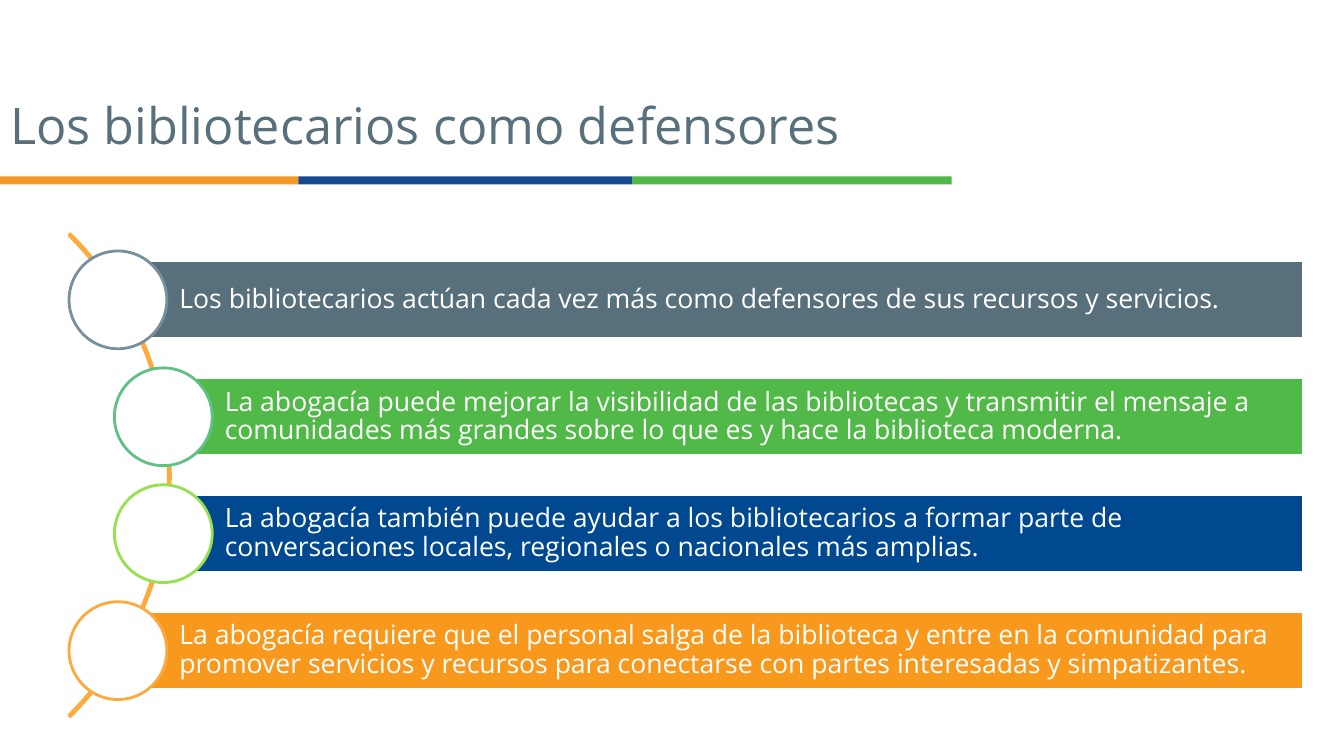
"""Build a slide on librarians as advocates, with four bars along an arc."""
from dataclasses import dataclass
from typing import Any

import pptx
import pptx.dml.color
import pptx.enum.shapes
import pptx.enum.text
import pptx.util

Inches = pptx.util.Inches
RGBColor = pptx.dml.color.RGBColor
Shape = pptx.enum.shapes.MSO_SHAPE
Anchor = pptx.enum.text.MSO_ANCHOR
Align = pptx.enum.text.PP_ALIGN

WHITE = RGBColor(0xFF, 0xFF, 0xFF)
SLATE = RGBColor(0x58, 0x6F, 0x7C)
GREEN = RGBColor(0x51, 0xB9, 0x48)
BLUE = RGBColor(0x00, 0x48, 0x90)
ORANGE = RGBColor(0xF8, 0x98, 0x1D)
STEEL = RGBColor(0x78, 0x90, 0x9C)
MINT = RGBColor(0x61, 0xC0, 0x85)
LIME = RGBColor(0x98, 0xE1, 0x4E)
AMBER = RGBColor(0xFE, 0xA9, 0x3F)
ARC = RGBColor(0xFF, 0xAA, 0x3F)
RULE_A = RGBColor(0xF4, 0x99, 0x25)
RULE_B = RGBColor(0x15, 0x4A, 0x90)
RULE_C = RGBColor(0x4E, 0xB7, 0x48)

FONT = "Open Sans"
RIGHT = 12.93
TOP = 2.59
STEP = 1.16
HIGH = 0.77
RING = 0.97


@dataclass(frozen=True)
class Rule:
    """A coloured piece of the line under the title."""

    left: float
    width: float
    fill: RGBColor


@dataclass(frozen=True)
class Point:
    """A bar of text with the ring at its left end."""

    left: float
    fill: RGBColor
    ring: RGBColor
    text: str


RULES = [
    Rule(0, 2.96, RULE_A),
    Rule(2.96, 3.31, RULE_B),
    Rule(6.27, 3.17, RULE_C),
]

POINTS = [
    Point(1.17, SLATE, STEEL,
          "Los bibliotecarios actúan cada vez más como defensores de sus "
          "recursos y servicios."),
    Point(1.62, GREEN, MINT,
          "La abogacía puede mejorar la visibilidad de las bibliotecas y "
          "transmitir el mensaje a comunidades más grandes sobre lo que es y "
          "hace la biblioteca moderna."),
    Point(1.62, BLUE, LIME,
          "La abogacía también puede ayudar a los bibliotecarios a formar "
          "parte de conversaciones locales, regionales o nacionales más "
          "amplias."),
    Point(1.17, ORANGE, AMBER,
          "La abogacía requiere que el personal salga de la biblioteca y "
          "entre en la comunidad para promover servicios y recursos para "
          "conectarse con partes interesadas y simpatizantes."),
]


def assign(item: Any, values: dict[str, Any]) -> None:
    """Set each named attribute of the item."""
    for name, value in values.items():
        setattr(item, name, value)


def draw(slide: Any, kind: Any, box: tuple[float, float, float, float],
         fill: RGBColor | None, line: RGBColor | None = None) -> Any:
    """Add a flat shape with the given fill and line."""
    shape = slide.shapes.add_shape(kind, *map(Inches, box))
    shape.shadow.inherit = False
    if fill is None:
        shape.fill.background()
    else:
        shape.fill.solid()
        shape.fill.fore_color.rgb = fill
    if line is None:
        shape.line.fill.background()
    else:
        shape.line.color.rgb = line
        shape.line.width = pptx.util.Pt(2)
    return shape


def write(shape: Any, text: str, size: int, color: RGBColor, anchor: Any,
          left: float, right: float) -> None:
    """Put one formatted paragraph in the shape."""
    frame = shape.text_frame
    frame.text = text
    assign(frame, {
        "word_wrap": True,
        "auto_size": pptx.enum.text.MSO_AUTO_SIZE.NONE,
        "vertical_anchor": anchor,
        "margin_left": Inches(left),
        "margin_right": Inches(right),
        "margin_top": Inches(0.05),
        "margin_bottom": Inches(0.05),
    })
    line = frame.paragraphs[0]
    assign(line, {"alignment": Align.LEFT, "line_spacing": 0.9})
    assign(line.font, {"name": FONT, "size": pptx.util.Pt(size)})
    line.font.color.rgb = color


def head(slide: Any) -> None:
    """Place the title and the line below it."""
    for rule in RULES:
        draw(slide, Shape.RECTANGLE, (rule.left, 1.75, rule.width, 0.08),
             rule.fill)
    title = slide.shapes.title
    assign(title, {"left": Inches(0), "top": Inches(0.41),
                   "width": Inches(8.98), "height": Inches(1.18)})
    write(title, "Los bibliotecarios como defensores", 36, SLATE,
          Anchor.BOTTOM, 0.1, 0.1)


def row(slide: Any, point: Point, top: float) -> None:
    """Draw a bar and its ring, centred on the bar's left end."""
    bar = draw(slide, Shape.RECTANGLE,
               (point.left, top, RIGHT - point.left, HIGH), point.fill, WHITE)
    write(bar, point.text, 19, WHITE, Anchor.MIDDLE, 0.61, 0.05)
    draw(slide, Shape.OVAL,
         (point.left - RING / 2, top + (HIGH - RING) / 2, RING, RING),
         WHITE, point.ring)


def main() -> None:
    """Build and save the deck."""
    deck = pptx.Presentation()
    assign(deck, {"slide_width": Inches(13.33), "slide_height": Inches(7.5)})
    slide = deck.slides.add_slide(deck.slide_layouts[5])
    head(slide)
    arc = draw(slide, Shape.BLOCK_ARC, (-5.08, 1.33, 6.77, 6.77), None, ARC)
    for index, value in enumerate((189, 27, 0.003)):
        arc.adjustments[index] = value
    for index, point in enumerate(POINTS):
        row(slide, point, TOP + index * STEP)
    deck.save("out.pptx")


if __name__ == "__main__":
    main()
